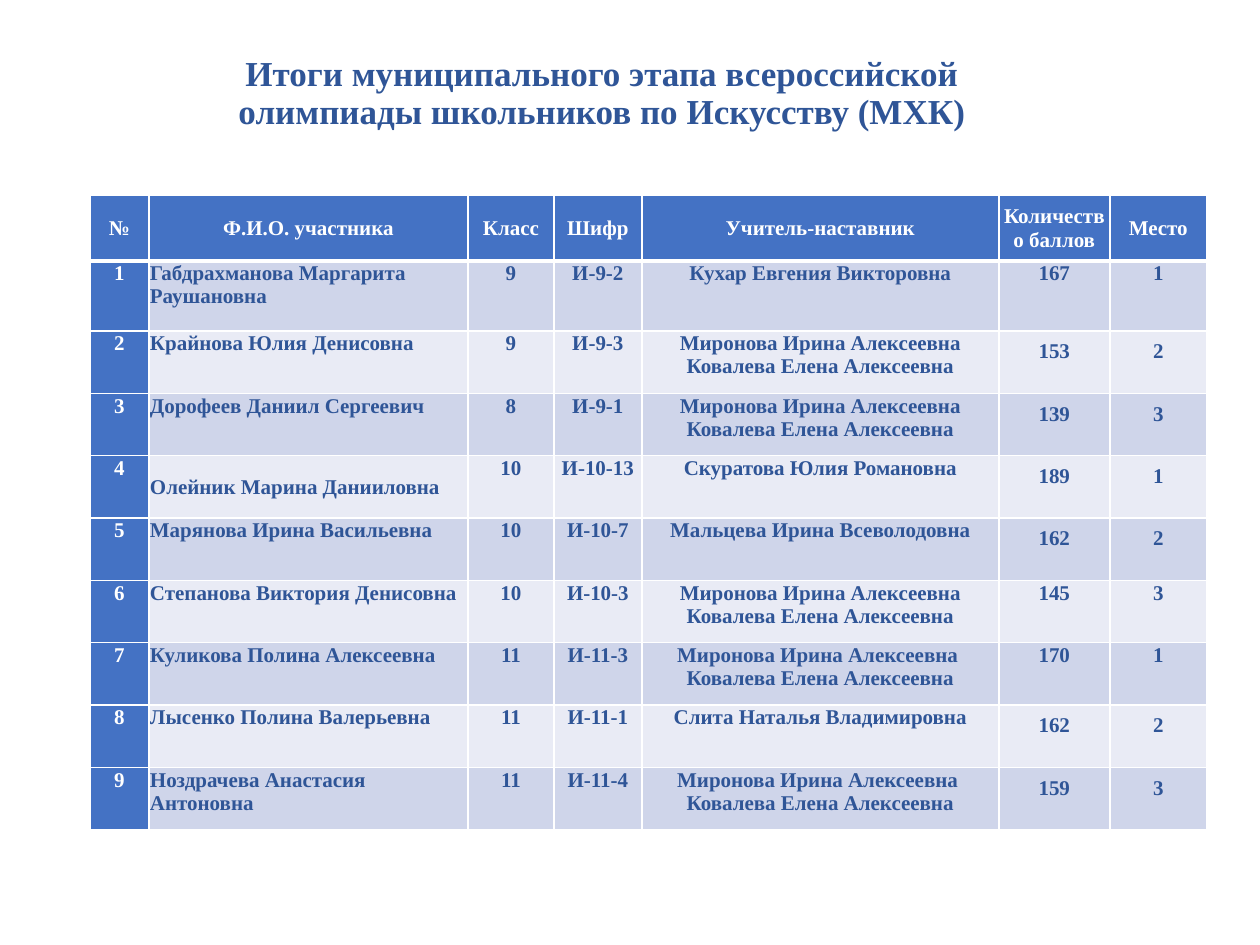
from lxml.etree import SubElement
from pptx import Presentation
from pptx.dml.color import RGBColor
from pptx.enum.text import MSO_ANCHOR, PP_ALIGN
from pptx.oxml.ns import qn
from pptx.util import Pt

PX = 914400 / 126
FONT = "Times New Roman"
NAVY, BLUE, WHITE = "2F5597", "4472C4", "FFFFFF"
BANDS = ["CFD5EA", "E9EBF5"]

TITLE = "Итоги муниципального этапа всероссийской олимпиады школьников по Искусству (МХК)"
HEADERS = ["№", "Ф.И.О. участника", "Класс", "Шифр", "Учитель-наставник",
           "Количество баллов", "Место"]
PAIR = "Миронова Ирина Алексеевна\vКовалева Елена Алексеевна"
SPACED_PAIR = PAIR.replace("\v", " \v")
# Name, class, code, teacher, points, place
RESULTS = [
    ("Габдрахманова Маргарита Раушановна", "9", "И-9-2", "Кухар Евгения Викторовна", "167", "1"),
    ("Крайнова Юлия Денисовна", "9", "И-9-3", PAIR, "153", "2"),
    ("Дорофеев Даниил Сергеевич", "8", "И-9-1", PAIR, "139", "3"),
    ("Олейник Марина Данииловна", "10", "И-10-13", "Скуратова Юлия Романовна", "189", "1"),
    ("Марянова Ирина Васильевна", "10", "И-10-7", "Мальцева Ирина Всеволодовна", "162", "2"),
    ("Степанова Виктория Денисовна", "10", "И-10-3", PAIR, "145", "3"),
    ("Куликова Полина Алексеевна", "11", "И-11-3", SPACED_PAIR, "170", "1"),
    ("Лысенко Полина Валерьевна", "11", "И-11-1", "Слита Наталья Владимировна", "162", "2"),
    ("Ноздрачева Анастасия Антоновна", "11", "И-11-4", SPACED_PAIR, "159", "3"),
]
COLUMN_WIDTHS = [59, 319, 86, 88, 357, 111, 97]
HEADER_HEIGHT, FIRST_HEIGHT = 66, 70
NAME_COLUMN, POINTS_COLUMN = 1, 5
TOP_SCORE_ROWS = (1, 6, 7)   # points and place sit at the top of the cell
MIDDLE_NAME_ROW = 4
RAISE = 22                   # bottom margin that lifts centred points


def px(length):
    return round(length * PX)


def color(code):
    return RGBColor.from_string(code)


def write(frame, text, size, ink, align):
    frame.text = text
    for paragraph in frame.paragraphs:
        paragraph.alignment = align
        for run in paragraph.runs:
            run.font.name = FONT
            run.font.size = Pt(size)
            run.font.bold = True
            run.font.color.rgb = color(ink)


def add_border(cell, side, width):
    line = SubElement(cell._tc.get_or_add_tcPr(), qn(f"a:ln{side}"), w=str(Pt(width)))
    fill = SubElement(line, qn("a:solidFill"))
    SubElement(fill, qn("a:srgbClr"), val=WHITE)


def add_title(slide, left, top, width, height):
    box = slide.shapes.add_textbox(px(left), px(top), px(width), px(height))
    frame = box.text_frame
    frame.word_wrap = True
    frame.vertical_anchor = MSO_ANCHOR.MIDDLE
    write(frame, TITLE, 20, NAVY, PP_ALIGN.CENTER)
    frame.paragraphs[0].line_spacing = 0.9


def fill_cell(cell, row, column, text):
    is_header = row == 0
    # Borders: a thick rule parts the header from the body
    for side in "LRTB":
        thick = (row, side) in ((0, "B"), (1, "T"))
        add_border(cell, side, 3 if thick else 1)
    cell.fill.solid()
    on_blue = is_header or column == 0
    cell.fill.fore_color.rgb = color(BLUE if on_blue else BANDS[(row - 1) % 2])

    # Anchoring
    cell.margin_left = cell.margin_right = cell.margin_top = px(1)
    cell.margin_bottom = 0
    raised = column >= POINTS_COLUMN and not is_header and row not in TOP_SCORE_ROWS
    centred = is_header or raised or (row, column) == (MIDDLE_NAME_ROW, NAME_COLUMN)
    cell.vertical_anchor = MSO_ANCHOR.MIDDLE if centred else MSO_ANCHOR.TOP
    if raised:
        cell.margin_bottom = px(RAISE)

    is_name = column == NAME_COLUMN and not is_header
    write(cell.text_frame, text, 12, WHITE if on_blue else NAVY,
          PP_ALIGN.LEFT if is_name else PP_ALIGN.CENTER)


def add_results(slide, left, top, width, height):
    rows = [HEADERS] + [(str(n), *result) for n, result in enumerate(RESULTS, 1)]
    table = slide.shapes.add_table(len(rows), len(HEADERS), px(left), px(top),
                                   px(width), px(height)).table
    for column, column_width in zip(table.columns, COLUMN_WIDTHS):
        column.width = px(column_width)

    # The rows below the first result share the rest of the height
    count = len(rows) - 2
    shared = (height - HEADER_HEIGHT - FIRST_HEIGHT) / count
    for row, row_height in zip(table.rows, [HEADER_HEIGHT, FIRST_HEIGHT] + [shared] * count):
        row.height = px(row_height)

    for r, texts in enumerate(rows):
        for c, text in enumerate(texts):
            fill_cell(table.cell(r, c), r, c, text)


def main():
    deck = Presentation()
    deck.slide_width, deck.slide_height = px(1260), px(945)
    slide = deck.slides.add_slide(deck.slide_layouts[6])
    add_title(slide, 173, 50, 858, 89)
    add_results(slide, 90, 195, sum(COLUMN_WIDTHS), 635)
    deck.save("out.pptx")


if __name__ == "__main__":
    main()
